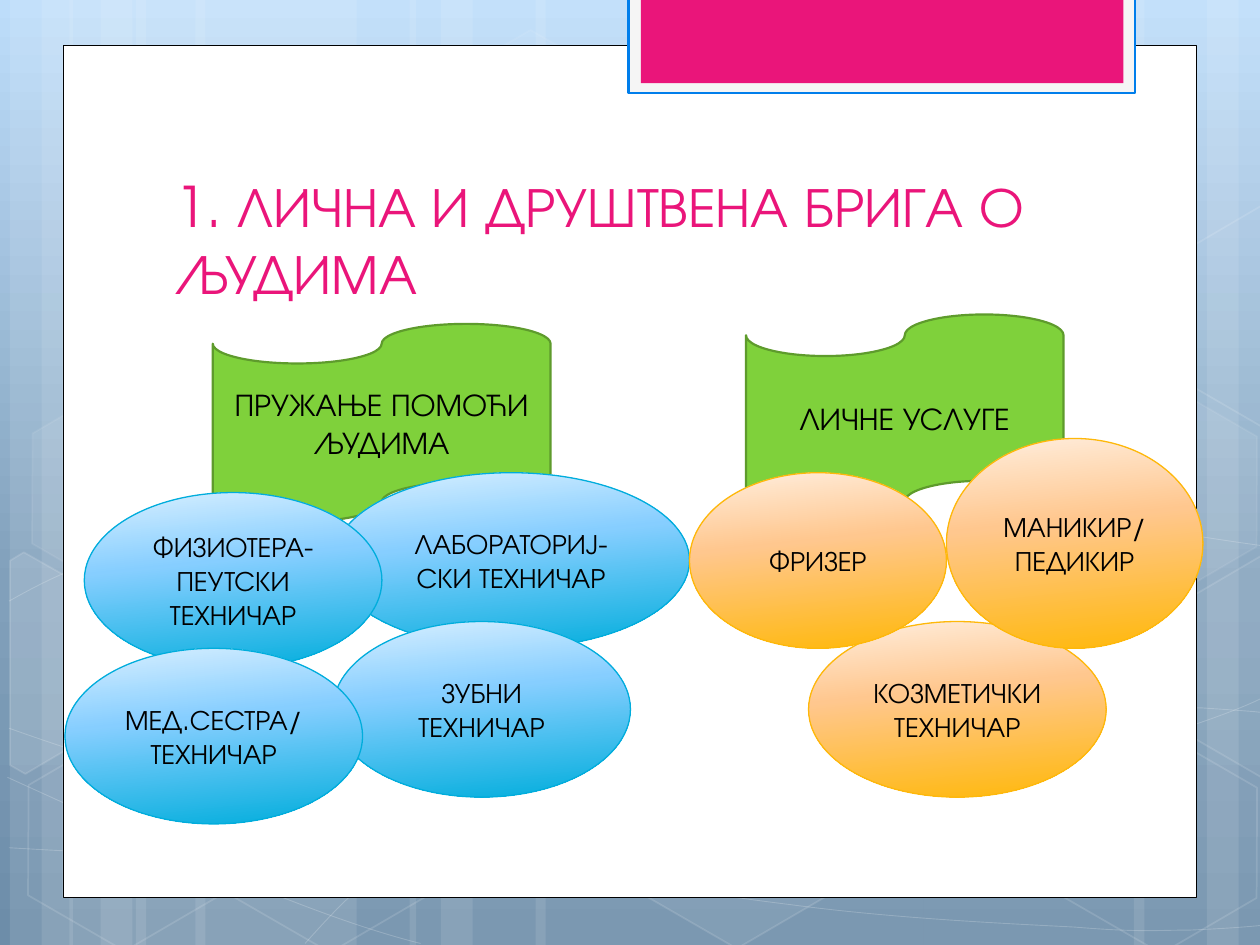
"""Build the slide on personal and social care occupations."""
import copy
import math

import pptx
import pptx.dml.color
import pptx.enum.shapes
import pptx.enum.text
import pptx.oxml.ns
import pptx.util
from lxml import etree

Cm = pptx.util.Cm
Pt = pptx.util.Pt
qn = pptx.oxml.ns.qn
SHAPE = pptx.enum.shapes.MSO_SHAPE

FONT = "TeX Gyre Adventor"
TILT = 30
COLORS = {
    "white": "FFFFFF", "black": "000000", "pink": "EA157A",
    "tab": "F5F5F5", "tab_line": "007EEB",
    "green": "7FD13B", "green_line": "5E9B2C",
    "blue_line": "00ADDC", "orange_line": "FEB80A",
}
GRADIENTS = {
    "sky": [(0, "BDDDFA"), (0.62, "81A0BB"), (1, "6D8DA9")],
    "blue": [(0, "D7EFFF"), (0.4, "86CEFF"), (1, "00ADDC")],
    "orange": [(0, "FFEEDE"), (0.4, "FFC78E"), (1, "FFB809")],
}

STRIPES = [
    (2.74, 4.45), (0.2, 1.27), (0.84, 2.11), (3.94, 4.45), (1.4, 1.27), (2.03, 2.11),
    (18.62, 4.45), (24.33, 1.27), (22.86, 2.11), (10.8, 7.82), (8.26, 1.27), (8.89, 2.11),
]
WAVES = [
    [(0.18, 17.09), (1.55, 17.17), (2.92, 17.25), (4.83, 17.22),
     (6.73, 17.2), (9.09, 17.15), (11.63, 16.89), (14.17, 16.64), (17.78, 16.15),
     (20.12, 15.67), (22.43, 15.19), (24.82, 14.43), (25.58, 14)],
    [(0.18, 12.12), (0.91, 11.71), (1.65, 11.33), (3.07, 10.95),
     (4.52, 10.57), (6.58, 10.01), (8.81, 9.83), (11.07, 9.65), (13.82, 9.63),
     (16.61, 9.83), (19.41, 10.03), (24.05, 10.82), (25.58, 11.02)],
    [(0.15, 15.67), (3.23, 17.07), (6.27, 18.47), (8.48, 19.02)],
    [(0.18, 14.68), (0.97, 14.96), (1.78, 15.24), (3.25, 15.65),
     (4.72, 16.03), (6.93, 16.66), (9.07, 17.09), (11.18, 17.53), (13.84, 17.98),
     (15.95, 18.24), (18.06, 18.52), (20.32, 18.62), (21.67, 18.69), (22.99, 18.8),
     (23.34, 18.75), (24, 18.75), (24.66, 18.72), (25.12, 18.69), (25.58, 18.64)],
    [(6.15, 19.02), (6.6, 18.52), (7.06, 18.01), (7.67, 17.55),
     (8.28, 17.09), (9.14, 16.59), (9.86, 16.23), (10.57, 15.88), (11, 15.72),
     (11.94, 15.47), (12.85, 15.21), (14.55, 14.86), (15.44, 14.68), (16.36, 14.5),
     (16.48, 14.5), (17.27, 14.45), (18.06, 14.38), (19.3, 14.3), (20.17, 14.27),
     (21.06, 14.25), (22.5, 14.27), (22.5, 14.27), (23.07, 14.27), (23.64, 14.27),
     (24.21, 14.27), (24.66, 14.3), (25.1, 14.33), (25.32, 14.35), (25.55, 14.38),
     (25.48, 14.35), (25.55, 14.38)],
]
HEXAGONS = [
    (8.48, 0.91, 4, 8), (12.62, 14.96, 6, 12), (0.28, 15.01, None, 12),
    (0.36, 7.92, 7, 8), (4.42, 15.04, None, 12), (19.13, 11.51, 10, 12),
    (21.18, 15.06, None, 12), (21.18, 7.98, 7, 8),
]
CUT_HEXAGONS = [
    ((0.91, 13.59), [(0.2, 11.3), (0.48, 11.13), (2.44, 12.24), (2.41, 14.48),
                     (0.51, 15.6), (0.2, 15.42)], 10),
    ((25.02, 13.21), [(23.52, 12.32), (25.43, 11.2), (25.63, 11.33), (25.63, 15.57),
                      (25.45, 15.67), (23.52, 14.55)], 4),
    ((25.02, 6.12), [(23.52, 5.26), (25.43, 4.14), (25.65, 4.27), (25.63, 8.51),
                     (25.45, 8.61), (23.52, 7.49)], None),
]
GROUPS = [
    ("ПРУЖАЊЕ ПОМОЋИ ЉУДИМА", (4.29, 6.53, 6.81, 3.99)),
    ("ЛИЧНЕ УСЛУГЕ", (15.04, 6.34, 6.4, 4.19)),
]
OCCUPATIONS = [
    ("ЛАБОРАТОРИЈ-СКИ ТЕХНИЧАР", "blue", (6.71, 9.53, 7.19, 3.54)),
    ("ФИЗИОТЕРА-ПЕУТСКИ ТЕХНИЧАР", "blue", (1.7, 9.93, 6, 3.54)),
    ("ЗУБНИ ТЕХНИЧАР", "blue", (6.71, 12.53, 6, 3.54)),
    ("МЕД.СЕСТРА/ТЕХНИЧАР", "blue", (1.31, 13.07, 6, 3.54)),
    ("КОЗМЕТИЧКИ ТЕХНИЧАР", "orange", (16.3, 12.53, 6, 3.54)),
    ("МАНИКИР/ПЕДИКИР", "orange", (19.08, 8.84, 5.17, 4.23)),
    ("ФРИЗЕР", "orange", (13.9, 9.53, 5.18, 3.54)),
]


def rgb(name):
    return pptx.dml.color.RGBColor.from_string(COLORS[name])


def set_alpha(parent, percent):
    color = parent.find(qn("a:solidFill"))[0]
    etree.SubElement(color, qn("a:alpha"), val=str(percent * 1000))


def paint(shape, fill=None, line=None, width=1, fill_alpha=None, line_alpha=None):
    shape.shadow.inherit = False
    properties = shape._element.spPr
    if fill:
        shape.fill.solid()
        shape.fill.fore_color.rgb = rgb(fill)
        if fill_alpha:
            set_alpha(properties, fill_alpha)
    else:
        shape.fill.background()
    if line:
        shape.line.color.rgb = rgb(line)
        shape.line.width = Pt(width)
        if line_alpha:
            set_alpha(properties.find(qn("a:ln")), line_alpha)
    else:
        shape.line.fill.background()


def paint_gradient(fill, element, name, angle):
    fill.gradient()
    fill.gradient_angle = 360 - angle
    stops = element.find(".//" + qn("a:gsLst"))
    stops.insert(1, copy.deepcopy(stops[0]))
    for stop, (position, color) in zip(fill.gradient_stops, GRADIENTS[name]):
        stop.position = position
        stop.color.rgb = pptx.dml.color.RGBColor.from_string(color)


def add_preset(slide, kind, box, **look):
    shape = slide.shapes.add_shape(kind, *map(Cm, box))
    paint(shape, **look)
    return shape


def add_outline(slide, points, close, **look):
    corners = [(Cm(x), Cm(y)) for x, y in points]
    builder = slide.shapes.build_freeform(*corners[0])
    builder.add_line_segments(corners[1:], close=close)
    shape = builder.convert_to_shape()
    paint(shape, **look)
    return shape


def add_wave(slide, knots):
    wave = add_outline(slide, knots, False, line="white", width=0.5, line_alpha=20)
    route = wave._element.find(".//" + qn("a:path"))
    segments = route.findall(qn("a:lnTo"))
    for first in range(0, len(segments), 3):
        bend = etree.SubElement(route, qn("a:cubicBezTo"))
        for segment in segments[first:first + 3]:
            bend.append(segment[0])
            route.remove(segment)


def turn_back(points, centre):
    cos, sin = math.cos(math.radians(TILT)), math.sin(math.radians(TILT))
    offsets = [(x - centre[0], y - centre[1]) for x, y in points]
    return [(centre[0] + x * cos + y * sin, centre[1] - x * sin + y * cos)
            for x, y in offsets]


def write(shape, words, size, color="black", centred=True):
    frame = shape.text_frame
    frame.word_wrap = True
    paragraph = frame.paragraphs[0]
    if centred:
        frame.vertical_anchor = pptx.enum.text.MSO_ANCHOR.MIDDLE
        paragraph.alignment = pptx.enum.text.PP_ALIGN.CENTER
    run = paragraph.add_run()
    run.text = words
    run.font.name = FONT
    run.font.size = Pt(size)
    run.font.color.rgb = rgb(color)


def add_backdrop(slide):
    paint_gradient(slide.background.fill, slide._element, "sky", 90)
    for left, width in STRIPES:
        add_preset(slide, SHAPE.RECTANGLE, (left, 0, width, 19.05),
                   fill="white", fill_alpha=10)
    for knots in WAVES:
        add_wave(slide, knots)
    for left, top, fill_alpha, line_alpha in HEXAGONS:
        hexagon = add_preset(slide, SHAPE.HEXAGON, (left, top, 4.45, 3.86),
                             fill=fill_alpha and "white", fill_alpha=fill_alpha,
                             line="white", line_alpha=line_alpha)
        hexagon.adjustments[0] = 0.285
        hexagon.rotation = TILT
    for centre, corners, fill_alpha in CUT_HEXAGONS:
        cut = add_outline(slide, turn_back(corners, centre), True,
                          fill=fill_alpha and "white", fill_alpha=fill_alpha,
                          line="white", line_alpha=12)
        cut.rotation = TILT


def add_panel(slide):
    add_preset(slide, SHAPE.RECTANGLE, (1.27, 0.91, 22.86, 17.19),
               fill="white", line="black", width=0.5)
    add_preset(slide, SHAPE.RECTANGLE, (12.67, -0.05, 10.21, 1.93),
               fill="tab", line="tab_line", width=1.25)
    add_preset(slide, SHAPE.RECTANGLE, (12.92, -0.05, 9.73, 1.73), fill="pink")


def add_title(slide):
    title = slide.shapes.add_textbox(Cm(3.1), Cm(3.33), Cm(18.82), Cm(12.19))
    title.text_frame.margin_left = Cm(0.44)
    title.text_frame.paragraphs[0].space_before = Pt(6.4)
    write(title, "1. ЛИЧНА И ДРУШТВЕНА БРИГА О ЉУДИМА", 32, "pink", centred=False)


def add_group(slide, words, box):
    banner = add_preset(slide, SHAPE.FLOWCHART_PUNCHED_TAPE, box,
                        fill="green", line="green_line", width=1.25)
    write(banner, words, 18)


def add_occupation(slide, words, hue, box):
    oval = add_preset(slide, SHAPE.OVAL, box, line=hue + "_line", width=0.75)
    paint_gradient(oval.fill, oval._element, hue, 84)
    write(oval, words, 16)


def main():
    deck = pptx.Presentation()
    deck.slide_width, deck.slide_height = Cm(25.4), Cm(19.05)
    slide = deck.slides.add_slide(deck.slide_layouts[6])
    add_backdrop(slide)
    add_panel(slide)
    add_title(slide)
    for words, box in GROUPS:
        add_group(slide, words, box)
    for words, hue, box in OCCUPATIONS:
        add_occupation(slide, words, hue, box)
    deck.save("out.pptx")


if __name__ == "__main__":
    main()
